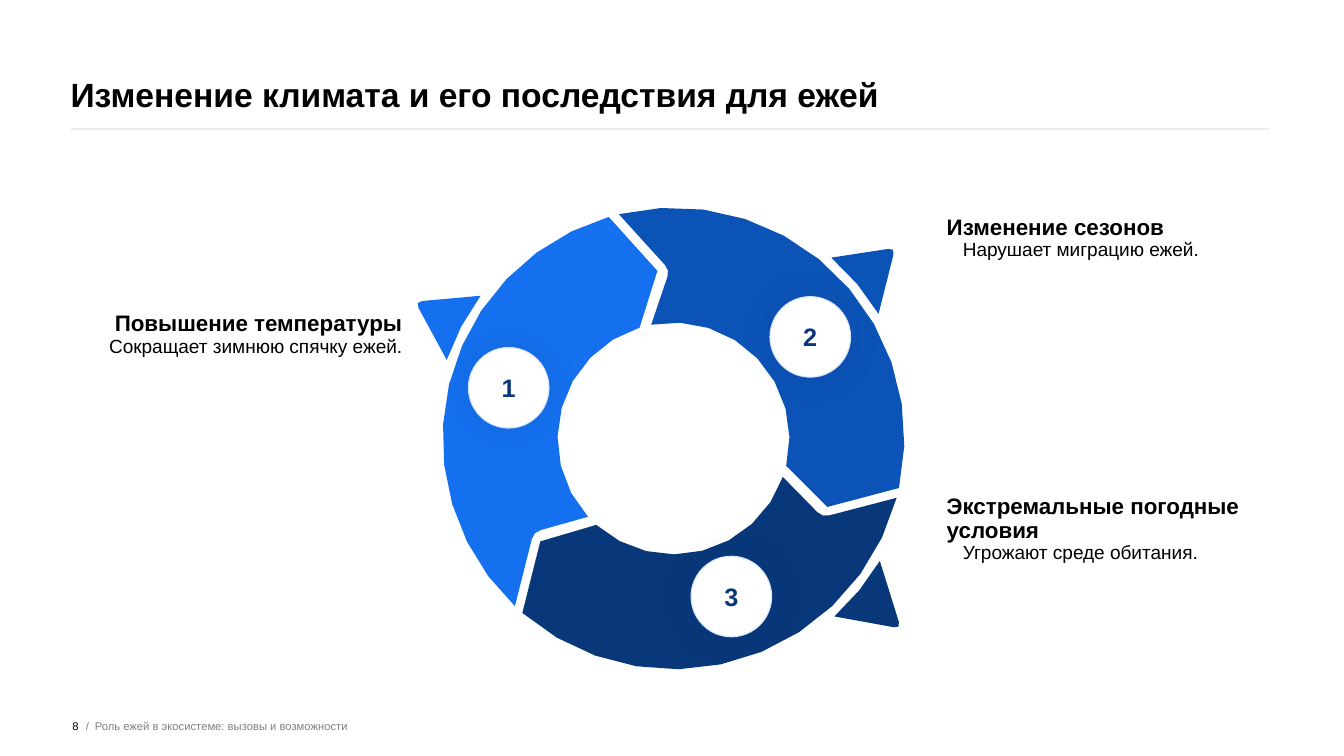
from math import acos, ceil, cos, degrees, hypot, radians, sin

from lxml import etree
from pptx import Presentation
from pptx.dml.color import RGBColor
from pptx.enum.shapes import MSO_CONNECTOR, MSO_SHAPE
from pptx.enum.text import MSO_ANCHOR, MSO_AUTO_SIZE, PP_ALIGN
from pptx.oxml.ns import qn
from pptx.util import Inches, Pt

LEFT, RIGHT, CENTER = PP_ALIGN.LEFT, PP_ALIGN.RIGHT, PP_ALIGN.CENTER
TOP, MIDDLE, BOTTOM = MSO_ANCHOR.TOP, MSO_ANCHOR.MIDDLE, MSO_ANCHOR.BOTTOM
OVAL, STRAIGHT = MSO_SHAPE.OVAL, MSO_CONNECTOR.STRAIGHT
FIXED = MSO_AUTO_SIZE.NONE

BLACK, GRAY, WHITE, NAVY = "000000", "808080", "FFFFFF", "08387A"

# Ring radii in inches: hole, arrow tips, rim, pointer base
HOLE, TIP, RIM, BASE = 1.15, 1.67, 2.29, 2.38

# Angles in degrees, clockwise from the right: rim, tip, hole and base are
# (start, end) pairs; peak and badge are (radius, angle) pairs
STEPS = [
    dict(no="1", color="1570EF", rim=(133.4, 253.7), tip=(146.2, 264.5),
         hole=(137.5, 253), base=(199.1, 216.5), peak=(2.9, 207.9),
         badge=(1.71, 197.1)),
    dict(no="2", color="0C53B7", rim=(-103.7, 12.4), tip=(-91.3, 24),
         hole=(-101.1, 13.7), base=(-48.9, -31.3), peak=(2.9, -40.7),
         badge=(1.69, -36.6)),
    dict(no="3", color=NAVY, rim=(14.9, 130.9), tip=(27.9, 142.3),
         hole=(19.4, 131.8), base=(30.7, 47.9), peak=(2.94, 39.9),
         badge=(1.67, 69.9)),
]

# Left, top, alignment, heading, detail
NOTES = [
    (0.79, 3.1, RIGHT, "Повышение температуры", "Сокращает зимнюю спячку ежей."),
    (9.39, 2.14, LEFT, "Изменение сезонов", "Нарушает миграцию ежей."),
    (9.39, 4.91, LEFT, "Экстремальные погодные условия", "Угрожают среде обитания."),
]


def rgb(code):
    return RGBColor.from_string(code)


def setup(frame, anchor):
    frame.margin_left = frame.margin_right = 0
    frame.margin_top = frame.margin_bottom = 0
    frame.auto_size = FIXED
    frame.word_wrap = True
    frame.vertical_anchor = anchor
    return frame


def write(para, text, size, color=BLACK, bold=False, align=LEFT):
    para.alignment = align
    run = para.add_run()
    run.text = text
    font = run.font
    font.name, font.size, font.bold = "Arial", Pt(size), bold
    font.color.rgb = rgb(color)


def textbox(slide, x, y, w, h, anchor):
    box = slide.shapes.add_textbox(Inches(x), Inches(y), Inches(w), Inches(h))
    return setup(box.text_frame, anchor)


# Geometry
def polar(cx, cy, radius, angle):
    turn = radians(angle)
    return cx + radius * cos(turn), cy + radius * sin(turn)


def arc(cx, cy, radius, start, end, slack=0.01):
    """Return the fewest points that stay within slack of the arc."""
    step = 2 * degrees(acos(1 - slack / radius))
    count = ceil(abs(end - start) / step)
    return [polar(cx, cy, radius, start + (end - start) * i / count)
            for i in range(count + 1)]


def bend(before, corner, after, cut=0.07):
    """Return three points that round off a corner."""
    ends = []
    for x, y in (before, after):
        dx, dy = x - corner[0], y - corner[1]
        part = cut / hypot(dx, dy)
        ends.append((corner[0] + dx * part, corner[1] + dy * part))
    first, last = ends
    middle = tuple((p + 2 * c + q) / 4
                   for p, c, q in zip(first, corner, last))
    return [first, middle, last]


def outline(slide, points, color):
    dots = [(Inches(x), Inches(y)) for x, y in points]
    pen = slide.shapes.build_freeform(*dots[0], scale=1.0)
    pen.add_line_segments(dots[1:], close=True)
    shape = pen.convert_to_shape()
    shape.shadow.inherit = False
    shape.fill.solid()
    shape.fill.fore_color.rgb = rgb(color)
    shape.line.fill.background()


# Parts of the ring
def segment(slide, cx, cy, step):
    rim = arc(cx, cy, RIM, *step["rim"])
    hole = arc(cx, cy, HOLE, *reversed(step["hole"]))
    notch, head = (polar(cx, cy, TIP, a) for a in step["tip"])
    outline(slide, rim + [head] + hole + bend(hole[-1], notch, rim[0]),
            step["color"])


def pointer(slide, cx, cy, step):
    base = arc(cx, cy, BASE, *step["base"])
    peak = polar(cx, cy, *step["peak"])
    outline(slide, base + bend(base[-1], peak, base[0]), step["color"])


def glow(shape):
    shape.shadow.inherit = False
    effects = shape._element.spPr.find(qn("a:effectLst"))
    shade = etree.SubElement(effects, qn("a:outerShdw"), blurRad=str(Pt(21)),
                             dist="0", dir="16200000", rotWithShape="0")
    tint = etree.SubElement(shade, qn("a:srgbClr"), val=NAVY)
    etree.SubElement(tint, qn("a:alpha"), val="20000")


def badge(slide, cx, cy, step, size=0.8):
    x, y = polar(cx, cy, *step["badge"])
    disc = slide.shapes.add_shape(OVAL, Inches(x - size / 2),
                                  Inches(y - size / 2),
                                  Inches(size), Inches(size))
    disc.fill.solid()
    disc.fill.fore_color.rgb = rgb(WHITE)
    disc.line.color.rgb = rgb("D0E2FC")
    disc.line.width = Pt(0.75)
    glow(disc)
    frame = setup(disc.text_frame, MIDDLE)
    write(frame.paragraphs[0], step["no"], 18, NAVY, True, CENTER)


def cycle(slide, x, y, size):
    cx, cy = x + size / 2, y + size / 2
    for part in (segment, pointer, badge):
        for step in STEPS:
            part(slide, cx, cy, step)


# Regions of the slide
def header(slide, x, y, w, h):
    title = slide.shapes.title
    title.left, title.top = Inches(x), Inches(y)
    title.width, title.height = Inches(w), Inches(h)
    para = setup(title.text_frame, BOTTOM).paragraphs[0]
    para.space_before = Pt(10)
    write(para, "Изменение климата и его последствия для ежей", 24, bold=True)
    level = Inches(y + h + 0.15)
    rule = slide.shapes.add_connector(STRAIGHT, Inches(x), level,
                                      Inches(x + 11.89), level)
    rule.line.color.rgb = rgb("EAECF0")
    rule.line.width = Pt(2)
    etree.SubElement(rule._element.spPr, qn("a:effectLst"))


def note(slide, x, y, align, head, detail):
    frame = textbox(slide, x, y, 3.2, 1.5, TOP)
    first, second = frame.paragraphs[0], frame.add_paragraph()
    write(first, head, 16, bold=True, align=align)
    write(second, detail, 13.6, align=align)
    first.line_spacing = second.line_spacing = 0.9
    second._p.get_or_add_pPr().set("marL", str(Inches(0.16)))


def footer(slide, x, y, h):
    parts = [(0, 0.31, "8", BLACK, RIGHT), (0.35, 0.12, " /", GRAY, LEFT),
             (0.47, 8.61, "Роль ежей в экосистеме: вызовы и возможности",
              GRAY, LEFT)]
    for shift, w, text, color, align in parts:
        frame = textbox(slide, x + shift, y, w, h, MIDDLE)
        write(frame.paragraphs[0], text, 8, color, align=align)


def main():
    deck = Presentation()
    deck.slide_width, deck.slide_height = Inches(13.33), Inches(7.5)
    slide = deck.slides.add_slide(deck.slide_layouts[5])
    header(slide, 0.7, 0, 11.93, 1.13)
    cycle(slide, 4.39, 2.06, 2 * RIM)
    for item in NOTES:
        note(slide, *item)
    footer(slide, 0.47, 6.9, 0.6)
    deck.save("out.pptx")


if __name__ == "__main__":
    main()
